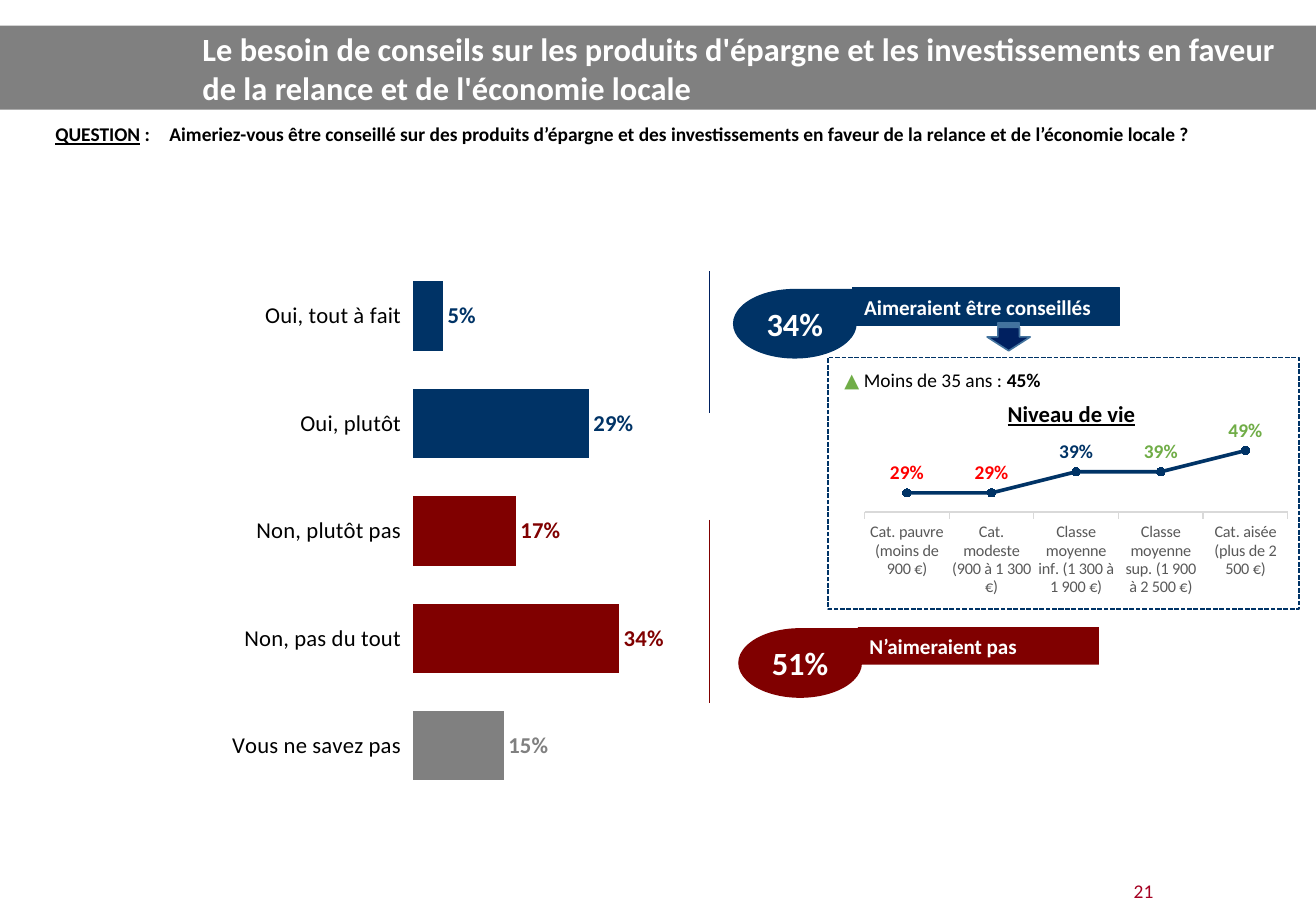
from dataclasses import dataclass

from lxml import etree
from pptx import Presentation
from pptx import util as u
from pptx.chart.data import CategoryChartData
from pptx.dml.color import RGBColor
from pptx.enum import chart as charts, dml, shapes, text
from pptx.oxml import parse_xml
from pptx.oxml.ns import nsdecls, qn


@dataclass(frozen=True)
class Theme:
    font: str = "Calibri"
    navy: str = "003366"
    arrow: str = "002060"
    arrow_edge: str = "43739E"
    maroon: str = "800000"
    gray: str = "808080"
    green: str = "70AD47"
    red: str = "FF0000"
    crimson: str = "A50021"
    axis: str = "D9D9D9"
    axis_text: str = "595959"
    black: str = "000000"
    white: str = "FFFFFF"
    title: int = 20
    heading: int = 14
    label: int = 13
    body: int = 12
    small: int = 10


THEME = Theme()


def style(font, size=THEME.body, color=THEME.black, bold=False, underline=False):
    font.name, font.size = THEME.font, u.Pt(size)
    font.bold, font.underline = bold, underline
    font.color.rgb = RGBColor.from_string(color)


def write(para, words, **formats):
    span = para.add_run()
    span.text = words
    style(span.font, **formats)


class Page:
    """Places elements on the slide; lengths are percentages of its size."""

    def __init__(self, deck, theme):
        self.deck, self.theme = deck, theme
        self.slide = deck.slides.add_slide(deck.slide_layouts[5])

    def place(self, left, top, width, height):
        across, down = self.deck.slide_width / 100, self.deck.slide_height / 100
        return [u.Emu(round(n)) for n in
                (left * across, top * down, width * across, height * down)]

    def title(self, words, place):
        box = self.slide.shapes.title
        box.left, box.top, box.width, box.height = self.place(*place)
        frame = box.text_frame
        frame.auto_size = text.MSO_AUTO_SIZE.NONE
        frame.vertical_anchor = text.MSO_ANCHOR.MIDDLE
        para = frame.paragraphs[0]
        para.alignment = text.PP_ALIGN.LEFT
        write(para, words, size=self.theme.title, color=self.theme.white, bold=True)
        return box

    def shape(self, kind, place, fill, line=None, weight=0.75, dash=None):
        box = self.slide.shapes.add_shape(kind, *self.place(*place))
        box.shadow.inherit = False
        box.fill.solid()
        box.fill.fore_color.rgb = RGBColor.from_string(fill)
        if line:
            box.line.color.rgb = RGBColor.from_string(line)
            box.line.width = u.Pt(weight)
            box.line.dash_style = dash
        else:
            box.line.fill.background()
        return box

    def text(self, place, spans, align=text.PP_ALIGN.LEFT):
        box = self.slide.shapes.add_textbox(*self.place(*place))
        box.text_frame.word_wrap = True
        para = box.text_frame.paragraphs[0]
        para.alignment = align
        for words, formats in spans:
            write(para, words, **formats)
        return box

    def callout(self, left, top, share, label, width, color, line=None):
        """A drop with a share, next to a label bar."""
        bar = self.shape(shapes.MSO_SHAPE.RECTANGLE, (left + 9.1, top - 0.1, width, 4.1),
                         color, line)
        drop = self.shape(shapes.MSO_SHAPE.TEAR, (left, top, 9.4, 7.6), color)
        for box, words, size, align in (
                (bar, label, self.theme.label, text.PP_ALIGN.LEFT),
                (drop, share, self.theme.title, text.PP_ALIGN.CENTER)):
            box.text_frame.vertical_anchor = text.MSO_ANCHOR.MIDDLE
            para = box.text_frame.paragraphs[0]
            para.alignment = align
            write(para, words, size=size, color=self.theme.white, bold=True)

    def rule(self, left, top, height, color):
        x, y, _, length = self.place(left, top, 0, height)
        line = self.slide.shapes.add_connector(
            shapes.MSO_CONNECTOR.STRAIGHT, x, y, x, y + length)
        line.line.color.rgb = RGBColor.from_string(color)
        line.line.width = u.Pt(0.5)
        etree.SubElement(line._element.spPr, qn("a:effectLst"))

    def chart(self, kind, place, rows, plot_area, limits, axis_font, label_size, label_at):
        """Draw rows of (category, value, label colour) with a fixed plot area."""
        data = CategoryChartData(number_format="0%")
        data.categories = [row[0] for row in rows]
        data.add_series("Series 1", [row[1] for row in rows])
        chart = self.slide.shapes.add_chart(kind, *self.place(*place), data).chart
        chart.has_legend = chart.has_title = False
        style(chart.font, size=axis_font["size"])

        axis, values = chart.category_axis, chart.value_axis
        axis.reverse_order = True
        axis.has_major_gridlines = values.has_major_gridlines = False
        axis.major_tick_mark = charts.XL_TICK_MARK.OUTSIDE
        style(axis.tick_labels.font, **axis_font)
        values.minimum_scale, values.maximum_scale = limits
        values.visible = False

        plot = chart.plots[0]
        plot.vary_by_categories = False
        series = plot.series[0]
        labels = series.data_labels
        labels.show_value = True
        labels.number_format, labels.number_format_is_linked = "0%", False
        labels.position = label_at
        style(labels.font, size=label_size, color=self.theme.navy, bold=True)
        for index, (_, _, color) in enumerate(rows):
            label = series.points[index].data_label
            style(label.font, size=label_size, color=color, bold=True)
            label.position = label_at

        area = chart._chartSpace.chart.plotArea
        for old in area.findall(qn("c:layout")):
            area.remove(old)
        sides = "".join(f'<c:{tag} val="{share}"/>' for tag, share in zip("xywh", plot_area))
        area.insert(0, parse_xml(
            f'<c:layout {nsdecls("c")}><c:manualLayout><c:layoutTarget val="inner"/>'
            f'<c:xMode val="edge"/><c:yMode val="edge"/>{sides}</c:manualLayout></c:layout>'))
        return chart, series


def main():
    deck = Presentation()
    deck.slide_width, deck.slide_height = u.Inches(11.29), u.Inches(7.87)
    page, t = Page(deck, THEME), THEME
    rectangle = shapes.MSO_SHAPE.RECTANGLE

    # Title band, page number and question
    title = page.title("Le besoin de conseils sur les produits d'épargne et les investissements "
                       "en faveur de la relance et de l'économie locale", (14.5, 2.8, 84, 9.15))
    band = page.shape(rectangle, (0, 2.8, 100, 9.15), t.gray)
    title._element.addprevious(band._element)
    page.text((84.3, 95.3, 5.2, 3.8), [("21", {"color": t.crimson})], text.PP_ALIGN.CENTER)
    question = page.text((3.4, 12.8, 94.5, 3.6), [
        ("QUESTION", {"bold": True, "underline": True}),
        (" :\tAimeriez-vous être conseillé sur des produits d’épargne et des investissements "
         "en faveur de la relance et de l’économie locale ?", {"bold": True})],
        text.PP_ALIGN.JUSTIFY)
    frame = question.text_frame
    frame.margin_left, frame.margin_right = u.Inches(0.09), u.Inches(0.36)
    frame.margin_top = frame.margin_bottom = u.Inches(0.04)
    hanging = frame.paragraphs[0]._p.get_or_add_pPr()
    hanging.set("marL", str(u.Inches(0.98)))
    hanging.set("indent", str(-u.Inches(0.98)))

    # Answers
    answers = [("Oui, tout à fait", 0.05, t.navy), ("Oui, plutôt", 0.29, t.navy),
               ("Non, plutôt pas", 0.17, t.maroon), ("Non, pas du tout", 0.34, t.maroon),
               ("Vous ne savez pas", 0.15, t.gray)]
    chart, bars = page.chart(
        charts.XL_CHART_TYPE.BAR_CLUSTERED, (9, 28.6, 74.5, 58.6), answers,
        (0.3, 0, 0.62, 1), (0, 1), {"size": t.heading}, t.heading,
        charts.XL_LABEL_POSITION.OUTSIDE_END)
    chart.plots[0].gap_width = 55
    chart.category_axis.format.line.fill.background()
    for index, (_, _, color) in enumerate(answers):
        fill = bars.points[index].format.fill
        fill.solid()
        fill.fore_color.rgb = RGBColor.from_string(color)

    # Totals
    page.rule(53.9, 29.6, 15.4, t.arrow)
    page.rule(53.9, 56.7, 20, t.maroon)
    page.callout(55.7, 31.5, "34%", "Aimeraient être conseillés", 20.3, t.navy, t.navy)
    page.callout(56.1, 68.5, "51%", "N’aimeraient pas", 18.3, t.maroon)

    # Detail panel
    page.shape(rectangle, (62.9, 39, 35.8, 27.45), t.white, t.navy, 1,
               dml.MSO_LINE.SQUARE_DOT)
    page.text((63.3, 39.5, 35, 3.8), [("▲ ", {"color": t.green}), ("Moins de 35 ans : ", {}),
                                      ("45%", {"bold": True})])
    living_standards = [("Cat. aisée (plus de 2 500 €)", 0.49, t.green),
                        ("Classe moyenne sup. (1 900 à 2 500 €)", 0.39, t.green),
                        ("Classe moyenne inf. (1 300 à 1 900 €)", 0.39, t.navy),
                        ("Cat. modeste (900 à 1 300 €)", 0.29, t.red),
                        ("Cat. pauvre (moins de 900 €)", 0.29, t.red)]
    chart, curve = page.chart(
        charts.XL_CHART_TYPE.LINE_MARKERS, (62.9, 42.7, 35, 23.9), living_standards,
        (0.08, 0.26, 0.92, 0.29), (0.2, 0.5), {"size": t.small, "color": t.axis_text},
        t.body, charts.XL_LABEL_POSITION.ABOVE)
    curve.smooth = False
    curve.marker.style, curve.marker.size = charts.XL_MARKER_STYLE.CIRCLE, 5
    curve.marker.format.fill.solid()
    curve.marker.format.fill.fore_color.rgb = RGBColor.from_string(t.navy)
    for line, color, weight in ((curve.format.line, t.navy, 2.25),
                                (curve.marker.format.line, t.navy, 0.75),
                                (chart.category_axis.format.line, t.axis, 0.75)):
        line.color.rgb, line.width = RGBColor.from_string(color), u.Pt(weight)
    page.text((75.7, 43, 20, 4.3),
              [("Niveau de vie", {"size": t.heading, "bold": True, "underline": True})])
    arrow = page.shape(shapes.MSO_SHAPE.STRIPED_RIGHT_ARROW, (75.6, 34.4, 2.1, 4.7),
                       t.arrow, t.arrow_edge, 1)
    arrow.rotation = 90

    deck.save("out.pptx")


if __name__ == "__main__":
    main()
